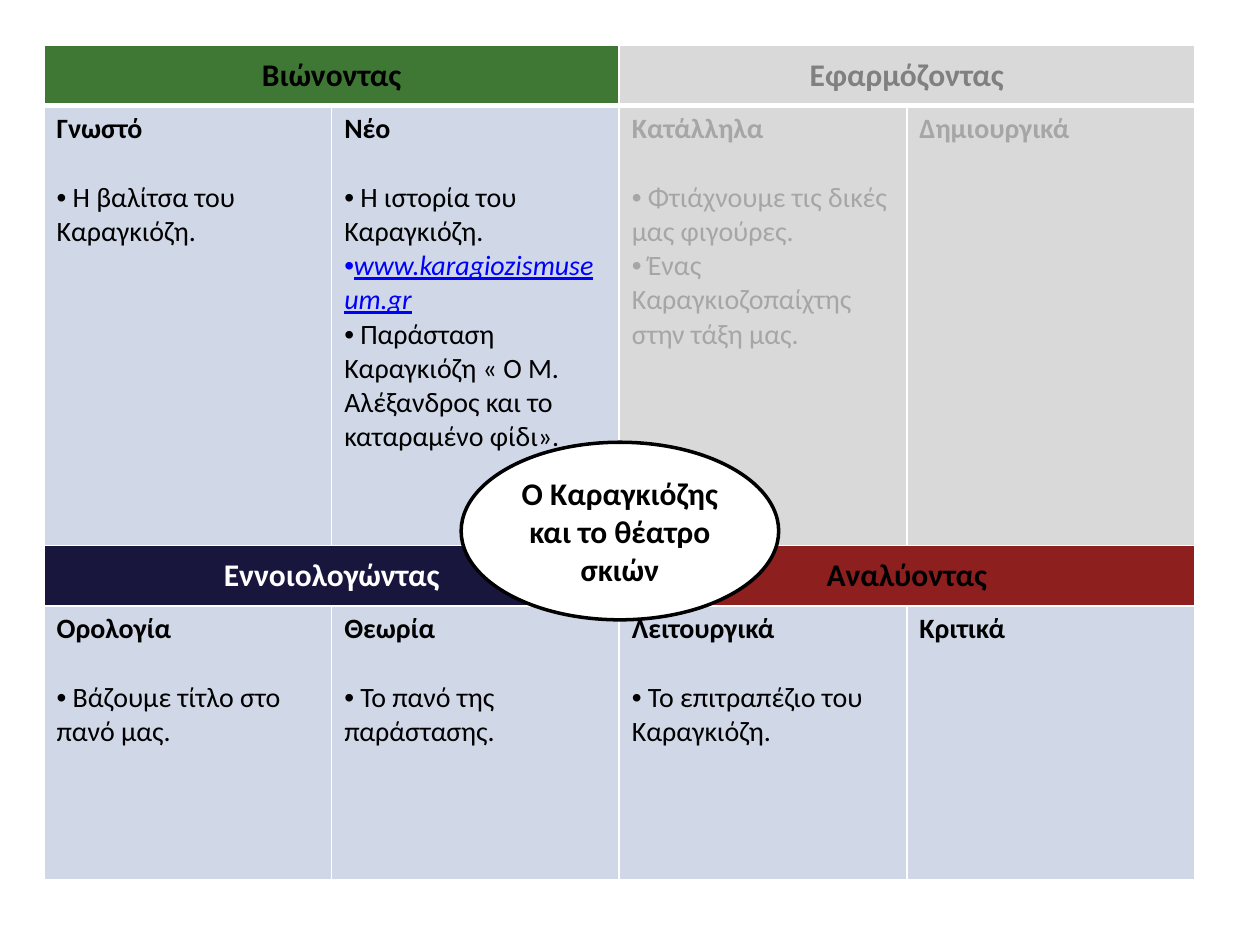
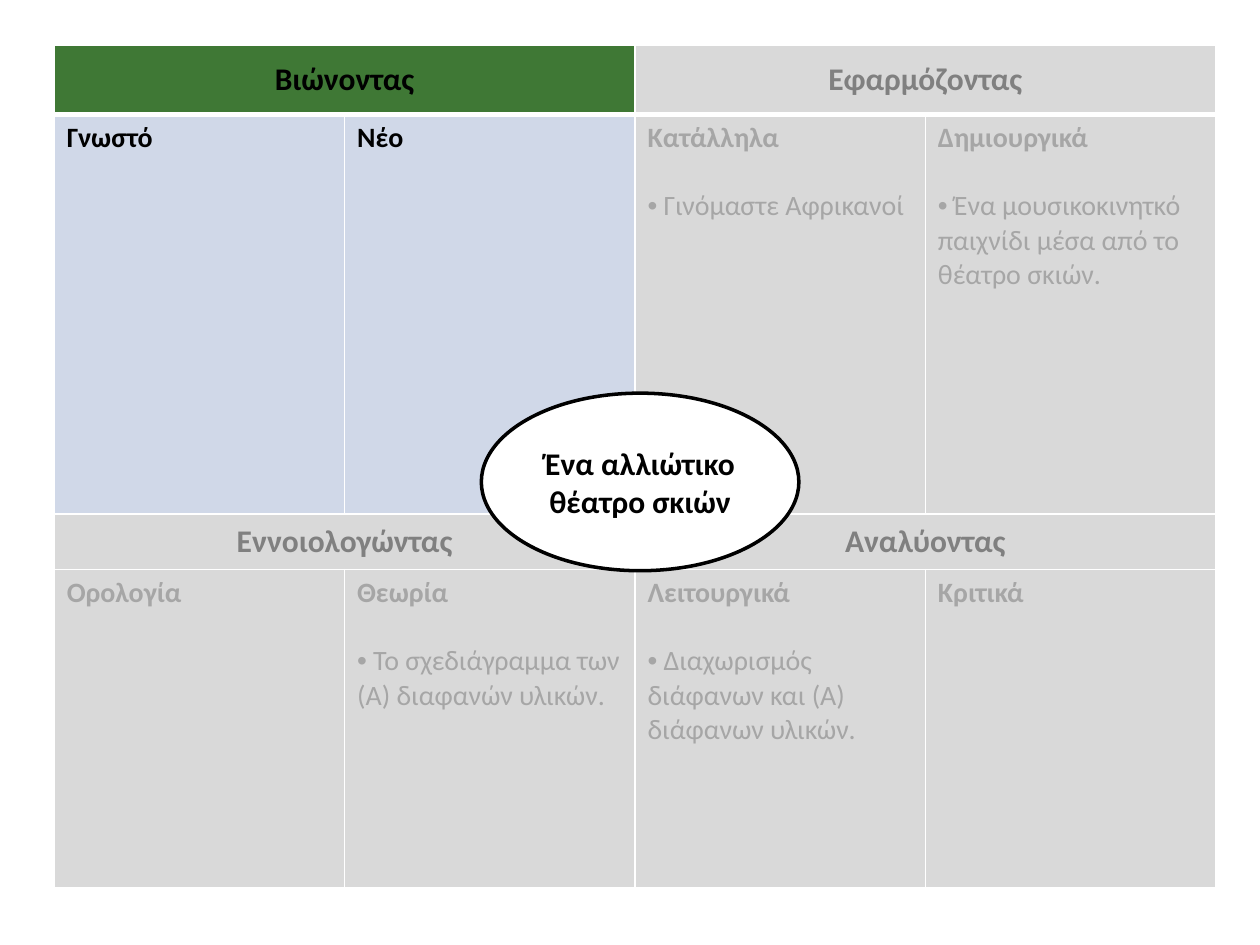
from pptx import Presentation
from pptx.dml.color import RGBColor
from pptx.enum.shapes import MSO_SHAPE
from pptx.enum.text import MSO_ANCHOR, PP_ALIGN
from pptx.oxml import parse_xml
from pptx.oxml.ns import nsdecls
from pptx.util import Inches, Pt

OVAL = MSO_SHAPE.OVAL
CENTER, LEFT = PP_ALIGN.CENTER, PP_ALIGN.LEFT
MIDDLE, TOP = MSO_ANCHOR.MIDDLE, MSO_ANCHOR.TOP

BLACK = RGBColor(0x00, 0x00, 0x00)
WHITE = RGBColor(0xFF, 0xFF, 0xFF)
GREEN = RGBColor(0x3F, 0x78, 0x35)
NAVY = RGBColor(0x18, 0x16, 0x3D)
RED = RGBColor(0x8D, 0x1F, 0x1F)
PALE = RGBColor(0xD0, 0xD8, 0xE8)
GRAY = RGBColor(0xD9, 0xD9, 0xD9)
DIM = RGBColor(0x80, 0x80, 0x80)
FAINT = RGBColor(0xA6, 0xA6, 0xA6)
BLUE = RGBColor(0x00, 0x00, 0xFF)

FONT = "Calibri"
HEAD, BODY = 18, 16
GAP = 19.5
SITE = "www.karagiozismuseum.gr"

ON, OFF = (PALE, BLACK), (GRAY, FAINT)
MUTE = (GRAY, DIM)
ALPHA = {NAVY: 89000}

GROUPS = [
    [("Βιώνοντας", ["Γνωστό", "Νέο"]),
     ("Εφαρμόζοντας", ["Κατάλληλα", "Δημιουργικά"])],
    [("Εννοιολογώντας", ["Ορολογία", "Θεωρία"]),
     ("Αναλύοντας", ["Λειτουργικά", "Κριτικά"])],
]

BOARDS = [
    {
        "topic": "Ο Καραγκιόζης και το θέατρο σκιών",
        "oval": (3.66, 3.51),
        "at": (0.35, 0.36), "width": 9.13,
        "rows": [0.48, 3.49, 0.48, 2.17],
        "looks": [[((GREEN, BLACK), ON), (MUTE, OFF)],
                  [((NAVY, WHITE), ON), ((RED, BLACK), ON)]],
        "items": {
            "Γνωστό": ["Η βαλίτσα του Καραγκιόζη."],
            "Νέο": ["Η ιστορία του Καραγκιόζη.", SITE,
                    "Παράσταση Καραγκιόζη « Ο Μ. Αλέξανδρος και το καταραμένο φίδι»."],
            "Κατάλληλα": ["Φτιάχνουμε τις δικές μας φιγούρες.",
                          "Ένας Καραγκιοζοπαίχτης στην τάξη μας."],
            "Ορολογία": ["Βάζουμε τίτλο στο πανό μας."],
            "Θεωρία": ["Το πανό της παράστασης."],
            "Λειτουργικά": ["Το επιτραπέζιο του Καραγκιόζη."],
        },
    },
    {
        "topic": "Ένα αλλιώτικο θέατρο σκιών",
        "oval": (3.82, 3.12),
        "at": (0.43, 0.36), "width": 9.22,
        "rows": [0.55, 3.17, 0.44, 2.53],
        "looks": [[((GREEN, BLACK), ON), (MUTE, OFF)],
                  [(MUTE, OFF), (MUTE, OFF)]],
        "items": {
            "Κατάλληλα": ["Γινόμαστε Αφρικανοί"],
            "Δημιουργικά": ["Ένα μουσικοκινητκό παιχνίδι μέσα από το θέατρο σκιών."],
            "Θεωρία": ["Το σχεδιάγραμμα των (Α) διαφανών υλικών."],
            "Λειτουργικά": ["Διαχωρισμός διάφανων και (Α) διάφανων υλικών."],
        },
    },
]


def style(par, size, color, bold=False, align=LEFT):
    par.alignment = align
    for run in par.runs:
        font = run.font
        font.name, font.size, font.bold = FONT, Pt(size), bold
        font.color.rgb = color


def paint(cell, color):
    cell.fill.solid()
    cell.fill.fore_color.rgb = color
    if color in ALPHA:
        tint = cell._tc.tcPr.find(".//{*}srgbClr")
        tint.append(parse_xml(f'<a:alpha {nsdecls("a")} val="{ALPHA[color]}"/>'))


def edge(cell, row):
    widths = {"L": 1, "R": 1, "T": 3 if row == 1 else 1, "B": 3 if row == 0 else 1}
    props = cell._tc.get_or_add_tcPr()
    for i, (side, width) in enumerate(widths.items()):
        props.insert(i, parse_xml(
            f'<a:ln{side} {nsdecls("a")} w="{Pt(width)}"><a:solidFill>'
            f'<a:srgbClr val="{WHITE}"/></a:solidFill></a:ln{side}>'))


def head(cell, text, look):
    fill, ink = look
    paint(cell, fill)
    cell.vertical_anchor = MIDDLE
    cell.text_frame.text = text
    style(cell.text_frame.paragraphs[0], HEAD, ink, True, CENTER)


def body(cell, name, items, look):
    fill, ink = look
    paint(cell, fill)
    cell.vertical_anchor = TOP
    frame = cell.text_frame
    frame.text = name
    style(frame.paragraphs[0], BODY, ink, True)
    for i, item in enumerate(items):
        par = frame.add_paragraph()
        site = item == SITE
        par.text = item if site else " " + item
        if i == 0:
            par.space_before = Pt(GAP)
        props = par._p.get_or_add_pPr()
        props.append(parse_xml(f'<a:buFont {nsdecls("a")} typeface="Arial"/>'))
        props.append(parse_xml(f'<a:buChar {nsdecls("a")} char="•"/>'))
        style(par, BODY, BLUE if site else ink)
        if site:
            par.runs[0].font.italic = par.runs[0].font.underline = True


def grid(slide, board):
    x, y = board["at"]
    rows, width = board["rows"], board["width"]
    table = slide.shapes.add_table(
        len(rows), 4, Inches(x), Inches(y), Inches(width), Inches(sum(rows))).table
    table.first_row = table.horz_banding = False
    for col in table.columns:
        col.width = Inches(width / 4)
    for row, tall in zip(table.rows, rows):
        row.height = Inches(tall)
    for r in range(len(rows)):
        for c in range(4):
            edge(table.cell(r, c), r)
    for i, pair in enumerate(GROUPS):
        for j, (title, names) in enumerate(pair):
            top, low = board["looks"][i][j]
            cell = table.cell(2 * i, 2 * j)
            cell.merge(table.cell(2 * i, 2 * j + 1))
            head(cell, title, top)
            for k, name in enumerate(names):
                body(table.cell(2 * i + 1, 2 * j + k), name,
                     board["items"].get(name, []), low)


def hub(slide, board):
    x, y = board["oval"]
    oval = slide.shapes.add_shape(OVAL, Inches(x), Inches(y), Inches(2.52), Inches(1.41))
    oval.shadow.inherit = False
    oval.fill.solid()
    oval.fill.fore_color.rgb = WHITE
    oval.line.color.rgb = BLACK
    oval.line.width = Pt(2)
    frame = oval.text_frame
    frame.word_wrap = True
    frame.vertical_anchor = MIDDLE
    frame.text = board["topic"]
    style(frame.paragraphs[0], HEAD, BLACK, True, CENTER)


def main():
    deck = Presentation()
    deck.slide_width, deck.slide_height = Inches(10), Inches(7.5)
    for board in BOARDS:
        slide = deck.slides.add_slide(deck.slide_layouts[6])
        grid(slide, board)
        hub(slide, board)
    deck.save("out.pptx")


if __name__ == "__main__":
    main()
